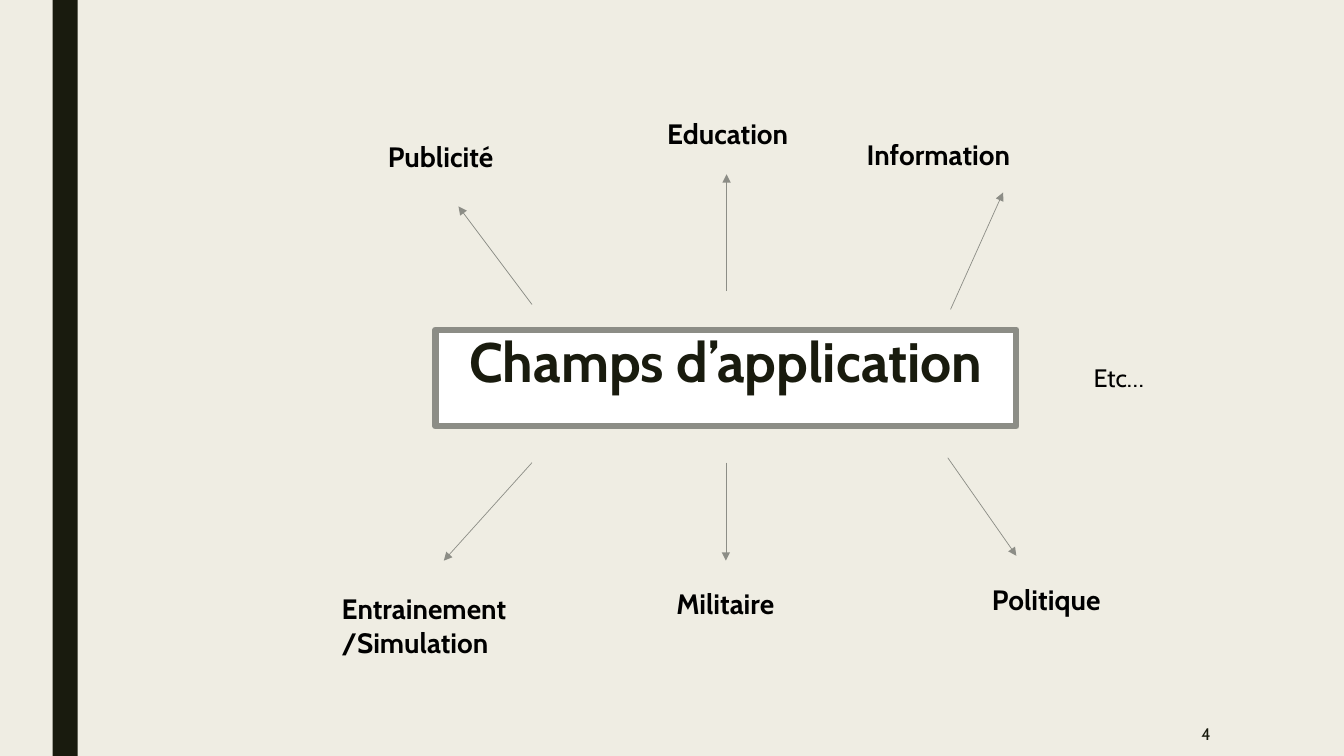
from dataclasses import dataclass

from lxml import etree
from pptx import Presentation
from pptx.dml.color import RGBColor
from pptx.enum.shapes import MSO_CONNECTOR, MSO_SHAPE
from pptx.enum.text import MSO_ANCHOR, MSO_AUTO_SIZE, PP_ALIGN
from pptx.oxml.ns import qn
from pptx.util import Pt


@dataclass(frozen=True)
class Theme:
    font: str = "Cabin"
    background: RGBColor = RGBColor(0xEF, 0xED, 0xE3)
    dark: RGBColor = RGBColor(0x19, 0x1B, 0x0E)
    grey: RGBColor = RGBColor(0x8C, 0x8D, 0x86)
    white: RGBColor = RGBColor(0xFF, 0xFF, 0xFF)
    black: RGBColor = RGBColor(0, 0, 0)
    title_size: float = 39.6
    label_size: float = 20
    note_size: float = 18
    number_size: float = 12


theme = Theme()


def write(shape, text, size, color, bold=False, align=PP_ALIGN.LEFT, anchor=MSO_ANCHOR.TOP):
    """Fill the shape with one wrapped paragraph in the theme font and return it."""
    frame = shape.text_frame
    frame.text = text
    frame.word_wrap = True
    frame.auto_size = MSO_AUTO_SIZE.NONE
    frame.vertical_anchor = anchor
    paragraph = frame.paragraphs[0]
    paragraph.alignment = align
    font = paragraph.runs[0].font
    font.name = theme.font
    font.size = Pt(size)
    font.bold = bold
    font.color.rgb = color
    return paragraph


def add_text(left, top, width, height, text, size, color, **style):
    box = slide.shapes.add_textbox(Pt(left), Pt(top), Pt(width), Pt(height))
    write(box, text, size, color, **style)


presentation = Presentation()
presentation.slide_width, presentation.slide_height = Pt(960), Pt(540)
slide = presentation.slides.add_slide(presentation.slide_layouts[5])
slide.background.fill.solid()
slide.background.fill.fore_color.rgb = theme.background

# Side bar
bar = slide.shapes.add_shape(MSO_SHAPE.RECTANGLE, Pt(37.5), 0, Pt(18), Pt(540))
bar.shadow.inherit = False
bar.fill.solid()
bar.fill.fore_color.rgb = theme.dark
bar.line.fill.background()

# Central title
title = slide.shapes.title
title.left, title.top, title.width, title.height = Pt(311), Pt(235.5), Pt(415), Pt(69)
title.fill.solid()
title.fill.fore_color.rgb = theme.white
title.line.color.rgb = theme.grey
title.line.width = Pt(4.5)
heading = write(title, "Champs d’application", theme.title_size, theme.dark,
                bold=True, align=PP_ALIGN.CENTER)
heading.line_spacing = 0.89

# Fields: label, its left, top, width and height, then the arrow's start and end
fields = [
    ("Publicité", (270, 96, 114.5, 31.5), (380, 217.5), (327.5, 147.5)),
    ("Education", (469.5, 80, 114.5, 31.5), (519, 208), (519, 124.5)),
    ("Information", (612, 95, 131, 31.5), (679, 221), (716.5, 137.5)),
    ("Entrainement/Simulation", (237, 419, 137, 55.5), (380, 330.5), (317, 400.5)),
    ("Militaire", (476, 415.5, 124, 31.5), (518.5, 330.5), (518.5, 400.5)),
    ("Politique", (701.5, 412.5, 124, 31.5), (677, 327), (726, 397)),
]
for label, box, start, end in fields:
    arrow = slide.shapes.add_connector(
        MSO_CONNECTOR.STRAIGHT, *(Pt(value) for value in start + end))
    arrow.line.color.rgb = theme.grey
    arrow.line.width = Pt(0.5)
    etree.SubElement(arrow.line._get_or_add_ln(), qn("a:tailEnd"), type="triangle")
    etree.SubElement(arrow._element.spPr, qn("a:effectLst"))
    add_text(*box, label, theme.label_size, theme.black, bold=True)

add_text(774, 255.5, 134, 29, "Etc…", theme.note_size, theme.black)
add_text(746, 508.5, 126, 31.5, "4", theme.number_size, theme.dark,
         align=PP_ALIGN.RIGHT, anchor=MSO_ANCHOR.MIDDLE)

presentation.save("out.pptx")
